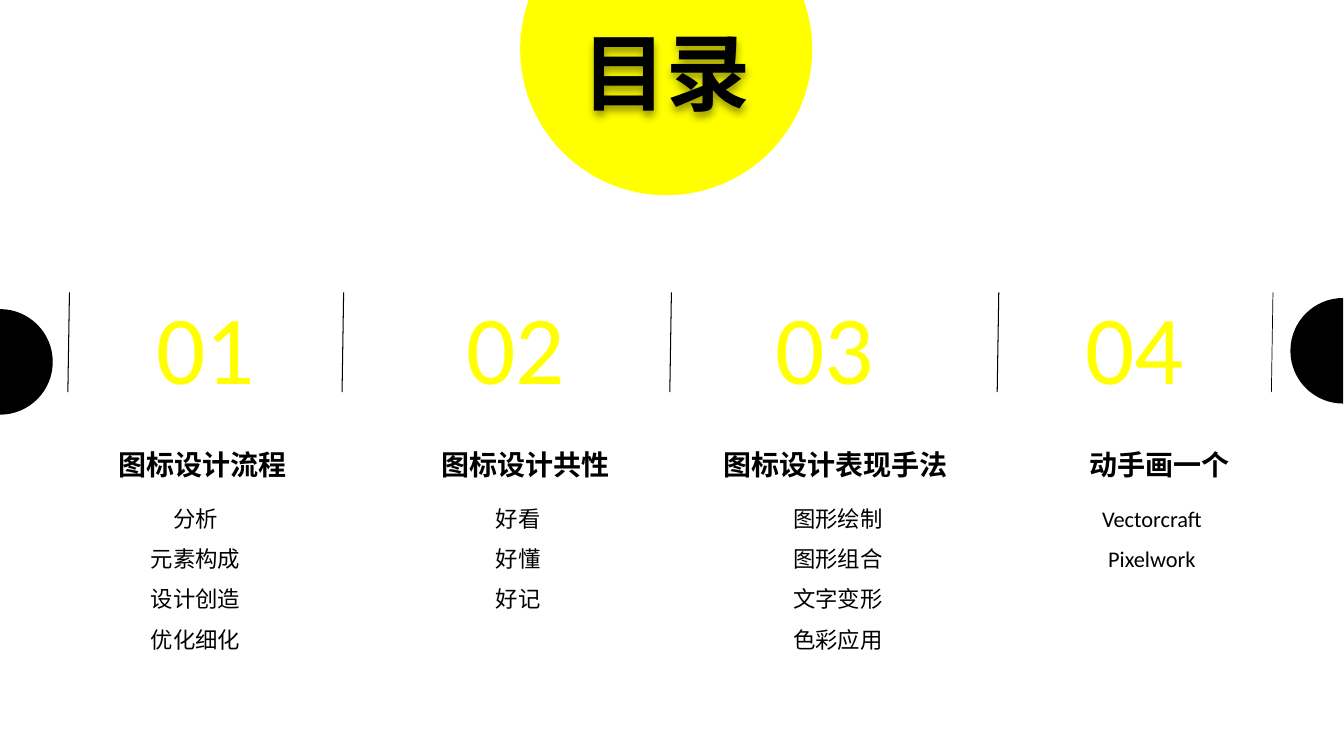
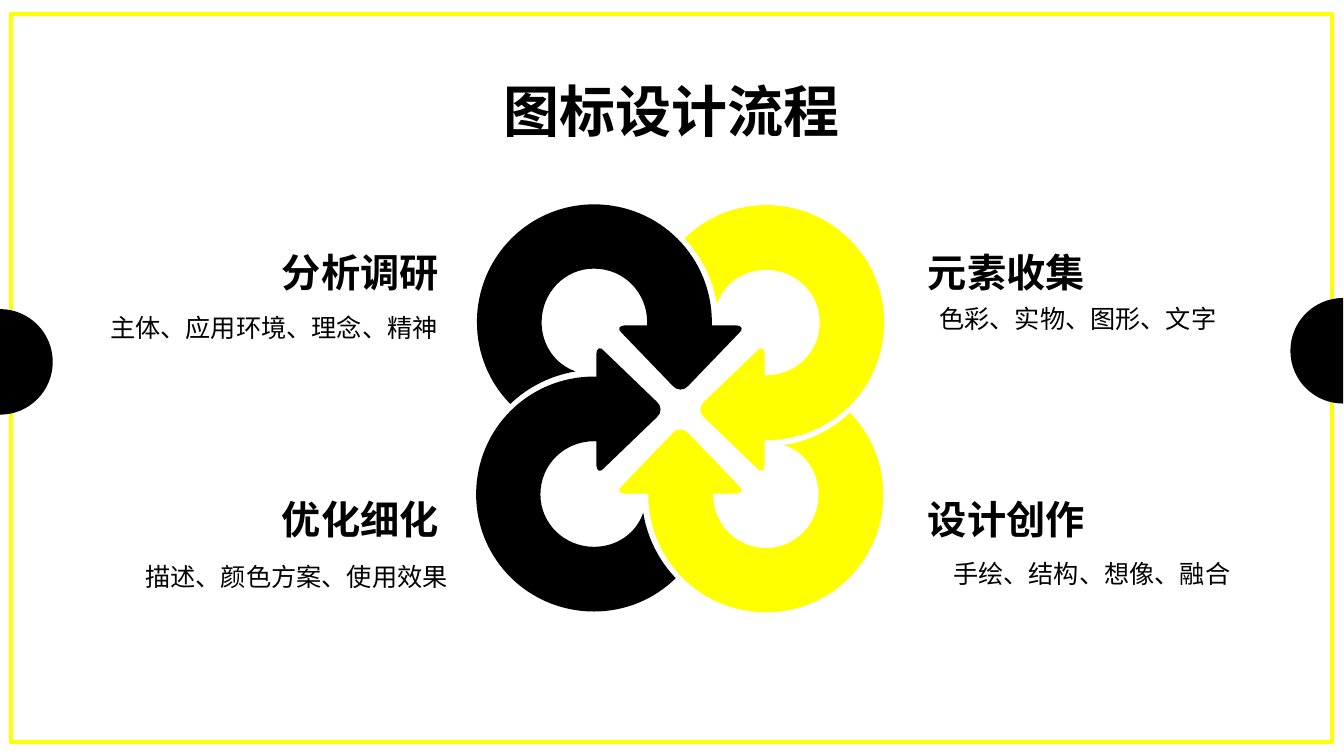
import math
from dataclasses import dataclass

import lxml.etree
import pptx
import pptx.dml.color
import pptx.enum.shapes
import pptx.enum.text
import pptx.oxml.ns
import pptx.util

Cm = pptx.util.Cm
Pt = pptx.util.Pt
qn = pptx.oxml.ns.qn
ALIGN = pptx.enum.text.PP_ALIGN
SHAPE = pptx.enum.shapes.MSO_SHAPE
Point = tuple[float, float]
Outline = list[list[Point]]

BLACK, WHITE, YELLOW = "000000", "FFFFFF", "FFFF00"
FONT = "Calibri"
SLIDE_W, SLIDE_H = 33.87, 19.05

COVER_TITLE = {"size": Pt(60), "bold": True}
SLIDE_TITLE = {"size": Pt(40), "bold": True}
NUMBER = {"size": Pt(69.6)}
HEADING = {"size": Pt(20), "bold": True}
ITEM = {"size": Pt(16)}
STEP_NAME = {"size": Pt(28), "bold": True}
STEP_NOTE = {"size": Pt(18)}


@dataclass(frozen=True)
class Box:
    left: float
    top: float
    width: float
    height: float

    def lengths(self) -> list[int]:
        return [Cm(v) for v in (self.left, self.top, self.width, self.height)]


@dataclass(frozen=True)
class Section:
    heading: str
    heading_centre: float
    items_centre: float
    items: tuple[str, ...]


@dataclass(frozen=True)
class Step:
    name: str
    name_left: float
    name_top: float
    note: str
    note_box: Box
    note_align: int


SECTIONS = [
    Section("图标设计流程", 5.11, 4.93, ("分析", "元素构成", "设计创造", "优化细化")),
    Section("图标设计共性", 13.25, 13.06, ("好看", "好懂", "好记")),
    Section("图标设计表现手法", 21.06, 21.12, ("图形绘制", "图形组合", "文字变形", "色彩应用")),
    Section("动手画一个", 29.22, 29.03, ("Vectorcraft", "Pixelwork")),
]
DIVIDERS = [(8.66, 0.75), (1.75, 0.75), (16.92, 0.75), (25.17, 0.75), (32.08, 0.5)]

STEPS = [
    Step("分析调研", 6.76, 6.02, "主体、应用环境、理念、精神",
         Box(2.28, 7.75, 9.25, 1.02), ALIGN.CENTER),
    Step("元素收集", 23.04, 6.02, "色彩、实物、图形、文字",
         Box(23.42, 7.52, 7.92, 1.02), ALIGN.LEFT),
    Step("设计创作", 23.04, 12.24, "手绘、结构、想像、融合",
         Box(23.77, 13.94, 8.31, 1.02), ALIGN.LEFT),
    Step("优化细化", 6.76, 12.24, "描述、颜色方案、使用效果",
         Box(2.61, 14.02, 9.73, 1.02), ALIGN.CENTER),
]

# Outlines of the top left arrow, in cm from the centre of the knot.
# One point is a straight line, three points are a Bézier curve.
HEADS_CENTRE = (17.15, 10.32)
LOOPS_CENTRE = (17.14, 10.29)
KNOT_COLORS = [BLACK, YELLOW, YELLOW, BLACK]
ARROWHEAD = [
    [(1.4, -2.12)],
    [(1.55, -2.12), (1.6, -2.02), (1.47, -1.92)],
    [(0.2, -0.6)],
    [(0.1, -0.47), (-0.1, -0.47), (-0.2, -0.6)],
    [(-1.47, -1.92)],
    [(-1.6, -2.02), (-1.55, -2.12), (-1.4, -2.12)],
]
LOOP = [
    [(-2.17, -5.14)],
    [(-3.8, -5.14), (-5.12, -3.82), (-5.12, -2.17)],
    [(-5.12, -1.38), (-4.81, -0.65), (-4.28, -0.11)],
    [(-3.82, -0.55), (-3.24, -0.83), (-2.63, -0.93)],
    [(-3.14, -1.1), (-3.49, -1.59), (-3.49, -2.17)],
    [(-3.49, -2.91), (-2.91, -3.52), (-2.17, -3.52)],
    [(-1.41, -3.52), (-0.83, -2.91), (-0.83, -2.17)],
    [(-0.83, -2.04), (-0.85, -1.89), (-0.88, -1.77)],
    [(-0.6, -1.77)],
    [(-0.6, -1.44)],
    [(0.7, -1.44)],
    [(0.77, -1.66), (0.8, -1.92), (0.8, -2.17)],
    [(0.8, -3.82), (-0.52, -5.14), (-2.17, -5.14)],
]


def rgb(color: str) -> pptx.dml.color.RGBColor:
    return pptx.dml.color.RGBColor.from_string(color)


def paint(s, fill: str | None, line: str | None = None, weight: float = 0):
    """Set fill and outline, without a shadow."""
    s.shadow.inherit = False
    for part, color in ((s.fill, fill), (s.line.fill, line)):
        if color is None:
            part.background()
        else:
            part.solid()
            part.fore_color.rgb = rgb(color)
    if line:
        s.line.width = Pt(weight)


def add_preset(slide, kind: int, box: Box, fill: str | None, line: str | None = None,
               weight: float = 0):
    paint(slide.shapes.add_shape(kind, *box.lengths()), fill, line, weight)


def add_text(slide, box: Box, lines: tuple[str, ...], style: dict, color: str = BLACK,
             align: int = ALIGN.CENTER, spacing: float = 1.0, inset: bool = True):
    s = slide.shapes.add_textbox(*box.lengths())
    tf = s.text_frame
    tf.word_wrap = True
    tf.auto_size = pptx.enum.text.MSO_AUTO_SIZE.SHAPE_TO_FIT_TEXT
    if not inset:
        for side in ("left", "top", "right", "bottom"):
            setattr(tf, f"margin_{side}", 0)
    for i, line in enumerate(lines):
        p = tf.add_paragraph() if i else tf.paragraphs[0]
        p.alignment = align
        p.line_spacing = spacing
        r = p.add_run()
        r.text = line
        for name, value in {"name": FONT, **style}.items():
            setattr(r.font, name, value)
        r.font.color.rgb = rgb(color)
    return s


def add_effects(s):
    """Add an empty effect list, which takes the theme shadow away."""
    return lxml.etree.SubElement(s._element.spPr, qn("a:effectLst"))


def add_soft_shadow(s):
    shadow = lxml.etree.SubElement(add_effects(s), qn("a:outerShdw"), blurRad="76200",
                                   dist="50800", dir="5400000", algn="t", rotWithShape="0")
    color = lxml.etree.SubElement(shadow, qn("a:srgbClr"), val=BLACK)
    lxml.etree.SubElement(color, qn("a:alpha"), val="40000")


def add_divider(slide, x: float, weight: float):
    s = slide.shapes.add_connector(pptx.enum.shapes.MSO_CONNECTOR.STRAIGHT,
                                   Cm(x), Cm(7.37), Cm(x - 0.04), Cm(9.88))
    s.line.color.rgb = rgb(BLACK)
    s.line.width = Pt(weight)
    add_effects(s)


def add_outline(slide, outline: Outline, centre: Point, color: str):
    """Draw a closed outline; segments of three points become Bézier curves."""
    cx, cy = centre
    start, *rest = [(Cm(cx + x), Cm(cy + y)) for segment in outline for x, y in segment]
    builder = slide.shapes.build_freeform(*start)
    builder.add_line_segments(rest, close=True)
    s = builder.convert_to_shape()
    lines = iter(s._element.findall(f".//{qn('a:lnTo')}"))
    for segment in outline[1:]:
        group = [next(lines) for _ in segment]
        if len(group) == 3:
            curve = group[0].makeelement(qn("a:cubicBezTo"))
            group[0].addprevious(curve)
            for line in group:
                curve.append(line[0])
                line.getparent().remove(line)
    paint(s, color)


def turn(outline: Outline) -> Outline:
    """Rotate an outline clockwise by a quarter turn."""
    return [[(-y, x) for x, y in segment] for segment in outline]


def add_edge_tab(slide, edge: float, middle: float, direction: int, radius: float = 1.33):
    """Add a half disc that bulges inwards from a slide edge."""
    tip = direction * radius
    bend = 4 / 3 * math.tan(math.pi / 8)
    half_disc = [
        [(0, -radius)],
        [(tip * bend, -radius), (tip, -radius * bend), (tip, 0)],
        [(tip, radius * bend), (tip * bend, radius), (0, radius)],
    ]
    add_outline(slide, half_disc, (edge, middle), BLACK)


def add_edge_tabs(slide):
    add_edge_tab(slide, SLIDE_W - 0.02, 8.84, -1)
    add_edge_tab(slide, 0, 9.12, 1)


def add_knot(slide):
    """Add four looping arrows, each a quarter turn from the last."""
    head, loop = ARROWHEAD, LOOP
    for color in KNOT_COLORS:
        add_outline(slide, head, HEADS_CENTRE, color)
        add_outline(slide, loop, LOOPS_CENTRE, color)
        head, loop = turn(head), turn(loop)


def new_slide(prs):
    """Add a black slide with a white sheet over it."""
    slide = prs.slides.add_slide(prs.slide_layouts[6])
    slide.background.fill.solid()
    slide.background.fill.fore_color.rgb = rgb(BLACK)
    add_preset(slide, SHAPE.RECTANGLE, Box(-0.02, 0, 33.89, 19.1), WHITE)
    return slide


def build_contents(prs):
    slide = new_slide(prs)
    add_preset(slide, SHAPE.OVAL, Box(13.11, -2.44, 7.36, 7.36), YELLOW)
    add_soft_shadow(add_text(slide, Box(14.43, 0.38, 5.74, 2.82), ("目录",),
                             COVER_TITLE, align=ALIGN.LEFT))
    for i in range(len(SECTIONS)):
        add_text(slide, Box(3.21 + 7.8 * i, 7.11, 3.96, 3.23), (f"{i + 1:02}",),
                 NUMBER, YELLOW)
    for x, weight in DIVIDERS:
        add_divider(slide, x, weight)
    for section in SECTIONS:
        add_text(slide, Box(section.heading_centre - 3.16, 11.15, 6.32, 1.12),
                 (section.heading,), HEADING)
        height = 0.25 + 1.03 * len(section.items)
        add_text(slide, Box(section.items_centre - 3.81, 12.26, 7.62, height),
                 section.items, ITEM, spacing=1.5)
    add_edge_tabs(slide)


def build_process(prs):
    slide = new_slide(prs)
    add_text(slide, Box(12, 1.8, 9.86, 1.96), ("图标设计流程",), SLIDE_TITLE)
    add_preset(slide, SHAPE.RECTANGLE, Box(0.28, 0.36, 33.28, 18.34), None, YELLOW, 3)
    add_edge_tabs(slide)
    add_knot(slide)
    for step in STEPS:
        add_text(slide, Box(step.name_left, step.name_top, 4.29, 1.35), (step.name,),
                 STEP_NAME, align=ALIGN.RIGHT, spacing=1.2, inset=False)
    for step in STEPS:
        add_text(slide, step.note_box, (step.note,), STEP_NOTE, align=step.note_align)


def main():
    prs = pptx.Presentation()
    prs.slide_width, prs.slide_height = Cm(SLIDE_W), Cm(SLIDE_H)
    build_contents(prs)
    build_process(prs)
    prs.save("out.pptx")


if __name__ == "__main__":
    main()
